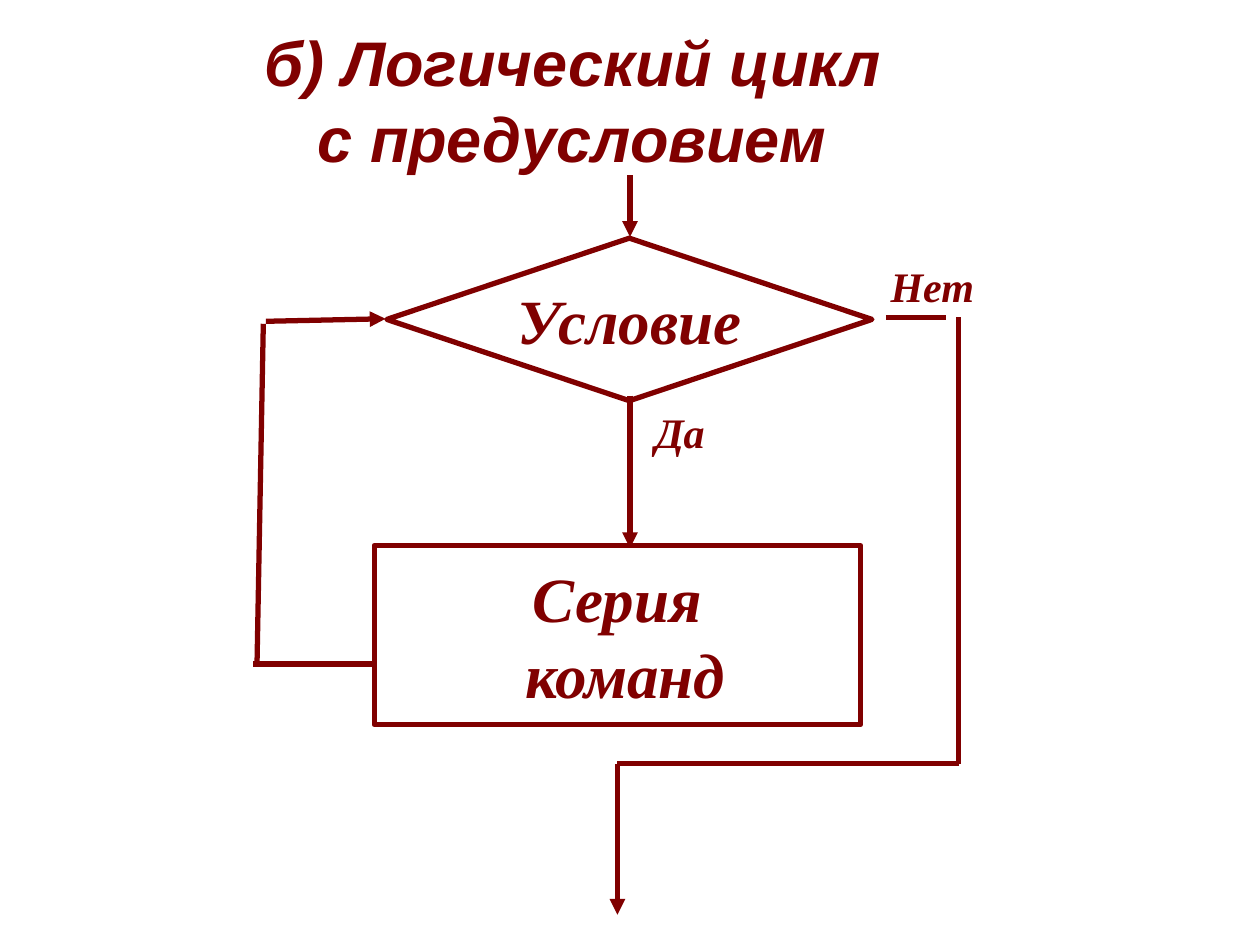
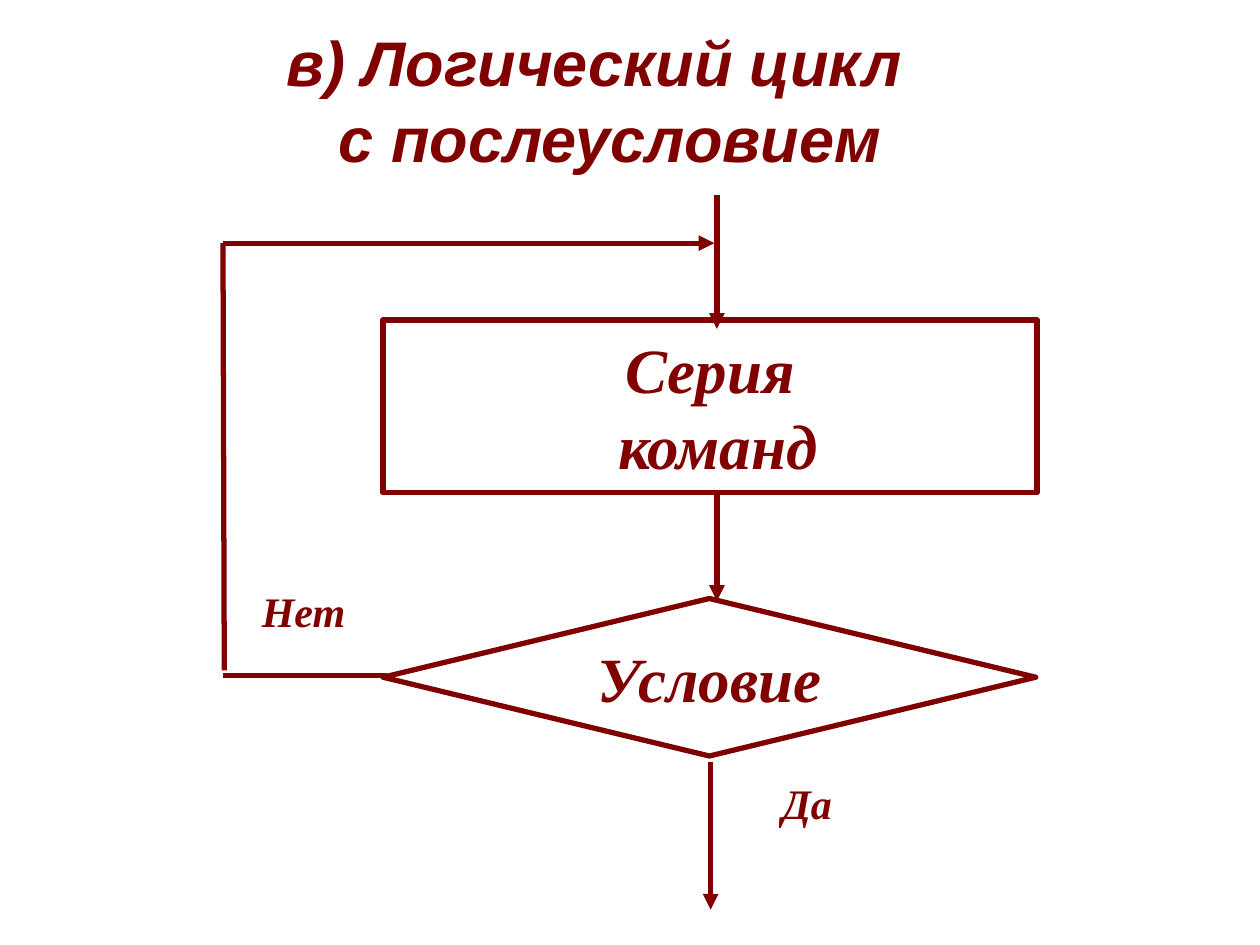
from lxml import etree
from pptx import Presentation
from pptx.dml.color import RGBColor
from pptx.enum.shapes import MSO_CONNECTOR, MSO_SHAPE
from pptx.enum.text import MSO_ANCHOR, MSO_AUTO_SIZE, PP_ALIGN
from pptx.oxml.ns import qn
from pptx.util import Inches, Pt

STRAIGHT = MSO_CONNECTOR.STRAIGHT
DECISION = MSO_SHAPE.FLOWCHART_DECISION
PROCESS = MSO_SHAPE.FLOWCHART_PROCESS
MIDDLE = MSO_ANCHOR.MIDDLE
LEFT, CENTER = PP_ALIGN.LEFT, PP_ALIGN.CENTER
NO_AUTOFIT = MSO_AUTO_SIZE.NONE
COLORS = {"ink": "800000", "paper": "FFFFFF"}
INK = RGBColor.from_string(COLORS["ink"])
PAPER = RGBColor.from_string(COLORS["paper"])
HEADING_FONT, CHART_FONT = "Arial", "Times New Roman"
STROKE = Pt(3)
TITLE_INDENT = Inches(0.42)
CONDITION, COMMANDS = ["Условие"], ["Серия", " команд"]

loops = [
    {
        "title": ["б) Логический цикл", "с предусловием"],
        "title_left": 2,
        "condition": (3.07, 1.89, 3.85, 1.29),
        "commands": (2.97, 4.33, 3.86, 1.42),
        "labels": [("Да", 5.1, 3.18, 0.82), ("Нет", 6.97, 2.02, 1.53)],
        "lines_below": [
            (2.11, 2.55, 3.06, 2.53, True),
            (2.09, 2.57, 2.04, 5.27, False),
            (7.03, 2.52, 7.51, 2.52, False),
            (7.61, 2.52, 7.61, 6.06, False),
            (7.61, 6.06, 4.9, 6.06, False),
            (5, 3.14, 5, 4.35, True),
        ],
        "lines_above": [
            (4.9, 6.06, 4.9, 7.26, True),
            (2.01, 5.27, 2.97, 5.27, False),
            (5, 1.39, 5, 1.88, True),
        ],
    },
    {
        "title": ["в) Логический цикл", "с послеусловием"],
        "title_left": 2.17,
        "condition": (3.04, 4.75, 5.18, 1.25),
        "commands": (3.04, 2.54, 5.19, 1.37),
        "labels": [("Да", 6.11, 6.12, 1.1), ("Нет", 1.98, 4.6, 2.06)],
        "lines_below": [
            (1.77, 1.93, 5.67, 1.93, True),
            (1.77, 1.93, 1.78, 5.32, False),
            (5.69, 3.61, 5.69, 4.77, True),
        ],
        "lines_above": [
            (5.64, 6.05, 5.64, 7.22, True),
            (1.77, 5.36, 3.07, 5.36, False),
            (5.69, 1.55, 5.69, 2.61, True),
        ],
    },
]


def add_text(paragraph, text, font_name, size):
    run = paragraph.add_run()
    run.text = text
    run.font.name = font_name
    run.font.size = Pt(size)
    run.font.bold = run.font.italic = True
    run.font.color.rgb = INK


def add_flow_line(slide, x1, y1, x2, y2, has_arrow):
    flow = slide.shapes.add_connector(
        STRAIGHT, Inches(x1), Inches(y1), Inches(x2), Inches(y2))
    flow.line.color.rgb = INK
    flow.line.width = STROKE
    if has_arrow:
        etree.SubElement(flow.line._get_or_add_ln(), qn("a:tailEnd"), type="triangle")
    etree.SubElement(flow._element.spPr, qn("a:effectLst"))


prs = Presentation()
prs.slide_width, prs.slide_height = Inches(10), Inches(7.5)

for loop in loops:
    slide = prs.slides.add_slide(prs.slide_layouts[5])
    title = slide.shapes.title
    title.left, title.top = Inches(loop["title_left"]), Inches(0.25)
    title.width, title.height = Inches(6.61), Inches(1.08)
    title.text_frame.auto_size = NO_AUTOFIT
    title.text_frame.word_wrap = True
    title.text_frame.vertical_anchor = MIDDLE
    heading = title.text_frame.paragraphs[0]
    heading.alignment = LEFT
    indents = heading._p.get_or_add_pPr()
    indents.set("marL", str(TITLE_INDENT))
    indents.set("indent", str(-TITLE_INDENT))
    first_line, second_line = loop["title"]
    add_text(heading, first_line, HEADING_FONT, 36)
    heading.add_line_break()
    add_text(heading, second_line, HEADING_FONT, 36)

    for kind, place, words, lines in [
        (DECISION, loop["condition"], CONDITION, loop["lines_below"]),
        (PROCESS, loop["commands"], COMMANDS, loop["lines_above"]),
    ]:
        step = slide.shapes.add_shape(kind, *map(Inches, place))
        step.shadow.inherit = False
        step.fill.solid()
        step.fill.fore_color.rgb = PAPER
        step.line.color.rgb = INK
        step.line.width = STROKE
        frame = step.text_frame
        frame.word_wrap = False
        frame.vertical_anchor = MIDDLE
        for index, word in enumerate(words):
            paragraph = frame.add_paragraph() if index else frame.paragraphs[0]
            paragraph.alignment = CENTER
            add_text(paragraph, word, CHART_FONT, 36)
        for line in lines:
            add_flow_line(slide, *line)

    for answer, left, top, width in loop["labels"]:
        label = slide.shapes.add_textbox(
            Inches(left), Inches(top), Inches(width), Inches(0.5))
        label.text_frame.word_wrap = True
        add_text(label.text_frame.paragraphs[0], answer, CHART_FONT, 24)

prs.save("out.pptx")
